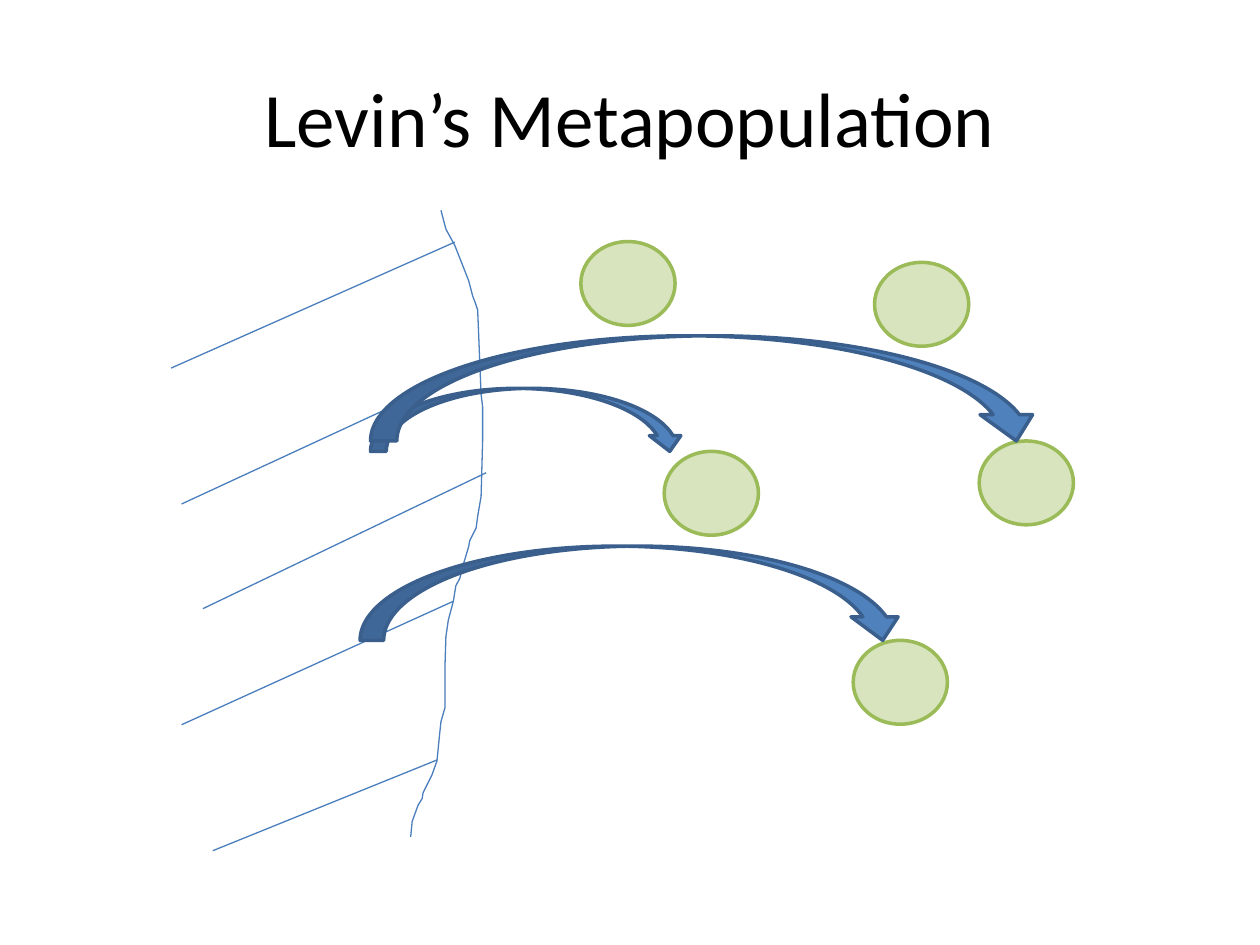
from typing import Any, NamedTuple

import pptx
import pptx.dml.color
import pptx.enum.shapes
import pptx.enum.text
import pptx.oxml
import pptx.util

Cm = pptx.util.Cm
Pt = pptx.util.Pt
RGBColor = pptx.dml.color.RGBColor
MSO_SHAPE = pptx.enum.shapes.MSO_SHAPE

BLACK = RGBColor(0x00, 0x00, 0x00)
COAST_BLUE = RGBColor(0x4B, 0x7E, 0xBC)
PATCH_FILL = RGBColor(0xD7, 0xE4, 0xBD)
PATCH_EDGE = RGBColor(0x9B, 0xBB, 0x59)
ARROW_FILL = RGBColor(0x4F, 0x81, 0xBD)
ARROW_EDGE = RGBColor(0x3A, 0x5F, 0x8C)

PATCH_WIDTH, PATCH_HEIGHT = 1.9, 1.69
THIN, THICK = Pt(0.75), Pt(2)


class Point(NamedTuple):
    x: float
    y: float


class Box(NamedTuple):
    left: float
    top: float
    width: float
    height: float


class Hatch(NamedTuple):
    shore: Point
    inland: Point


class Look(NamedTuple):
    preset: Any
    fill: RGBColor
    edge: RGBColor


PATCH = Look(MSO_SHAPE.OVAL, PATCH_FILL, PATCH_EDGE)
DISPERSAL = Look(MSO_SHAPE.CURVED_DOWN_ARROW, ARROW_FILL, ARROW_EDGE)

COAST = [
    (8.89, 4.24), (8.99, 4.62), (9.17, 4.95), (9.45, 5.66), (9.53, 5.97),
    (9.58, 6.1), (9.63, 6.25), (9.7, 7.95), (9.73, 8.2), (9.73, 8.89),
    (9.7, 10.01), (9.63, 10.41), (9.6, 10.64), (9.47, 10.9), (9.45, 11.02),
    (9.35, 11.35), (9.27, 11.66), (9.19, 11.81), (9.14, 12.12), (9.04, 12.5),
    (8.99, 12.83), (8.97, 13.46), (8.97, 14.27), (8.89, 14.55), (8.86, 14.83),
    (8.81, 15.34), (8.71, 15.62), (8.66, 15.72), (8.53, 15.98), (8.51, 16.1),
    (8.43, 16.23), (8.31, 16.56), (8.28, 16.87),
]
HATCHES = [
    Hatch(Point(9.17, 4.88), Point(3.45, 7.42)),
    Hatch(Point(9.58, 7.42), Point(3.66, 10.16)),
    Hatch(Point(9.14, 12.12), Point(3.66, 14.61)),
    Hatch(Point(9.8, 9.53), Point(4.09, 12.27)),
    Hatch(Point(8.81, 15.32), Point(4.29, 17.15)),
]
PATCHES = [
    Point(17.63, 5.29),
    Point(19.74, 8.89),
    Point(17.2, 12.91),
    Point(11.71, 4.87),
    Point(13.39, 9.1),
]
DISPERSALS = [
    Box(7.47, 7.83, 6.35, 1.27),
    Box(7.47, 6.77, 13.55, 2.12),
    Box(7.26, 11.01, 11.01, 1.9),
]


def apply(target: Any, values: dict[str, Any]) -> None:
    for name, value in values.items():
        setattr(target, name, value)


def set_line(line: Any, color: RGBColor, width: int) -> None:
    line.color.rgb = color
    line.width = width


def add_title(slide: Any, text: str, box: Box) -> None:
    title = slide.shapes.add_textbox(*map(Cm, box))
    apply(title.text_frame, {
        "word_wrap": True,
        "vertical_anchor": pptx.enum.text.MSO_ANCHOR.MIDDLE,
        "text": text,
    })
    heading = title.text_frame.paragraphs[0]
    heading.alignment = pptx.enum.text.PP_ALIGN.CENTER
    apply(heading.runs[0].font, {"name": "Calibri", "size": Pt(44)})
    heading.runs[0].font.color.rgb = BLACK


def add_coast(slide: Any) -> None:
    start, *rest = [(Cm(x), Cm(y)) for x, y in COAST]
    builder = slide.shapes.build_freeform(*start)
    builder.add_line_segments(rest, close=False)
    coast = builder.convert_to_shape()
    coast.shadow.inherit = False
    coast.fill.background()
    set_line(coast.line, COAST_BLUE, THIN)


def add_hatch(slide: Any, hatch: Hatch) -> None:
    stroke = slide.shapes.add_connector(
        pptx.enum.shapes.MSO_CONNECTOR.STRAIGHT,
        *map(Cm, hatch.shore + hatch.inland),
    )
    set_line(stroke.line, COAST_BLUE, THIN)
    properties = stroke._element.spPr
    properties.append(properties.makeelement(pptx.oxml.ns.qn("a:effectLst"), {}))


def add_preset(slide: Any, look: Look, box: Box) -> None:
    shape = slide.shapes.add_shape(look.preset, *map(Cm, box))
    shape.shadow.inherit = False
    shape.fill.solid()
    shape.fill.fore_color.rgb = look.fill
    set_line(shape.line, look.edge, THICK)


def main() -> None:
    deck = pptx.Presentation()
    apply(deck, {"slide_width": Cm(25.4), "slide_height": Cm(19.05)})
    slide = deck.slides.add_slide(deck.slide_layouts[6])

    add_title(slide, "Levin’s Metapopulation", Box(1.27, 0.76, 22.86, 3.18))
    add_coast(slide)
    for hatch in HATCHES:
        add_hatch(slide, hatch)
    for patch in PATCHES:
        add_preset(slide, PATCH, Box(patch.x, patch.y, PATCH_WIDTH, PATCH_HEIGHT))
    for dispersal in DISPERSALS:
        add_preset(slide, DISPERSAL, dispersal)

    deck.save("out.pptx")


if __name__ == "__main__":
    main()
